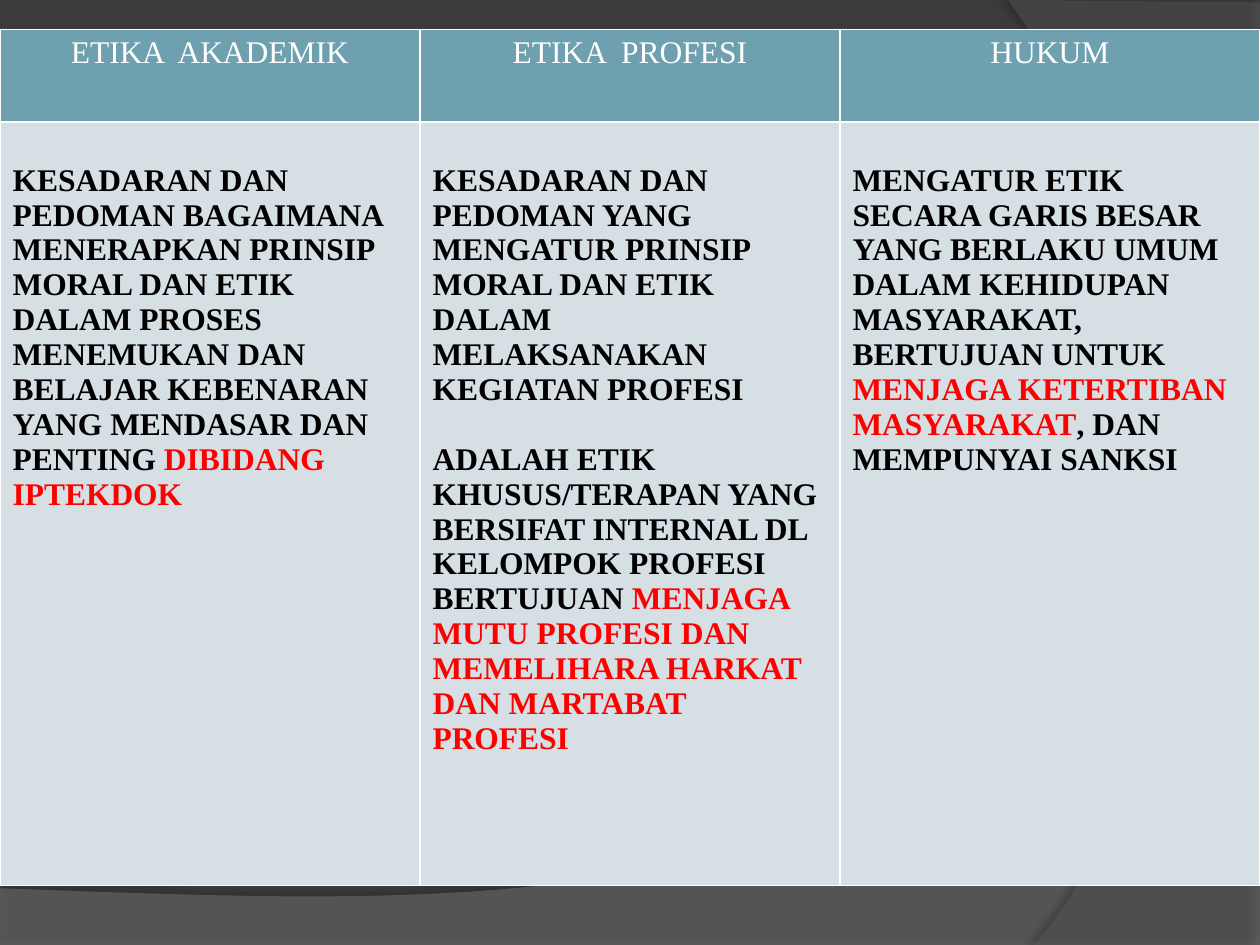
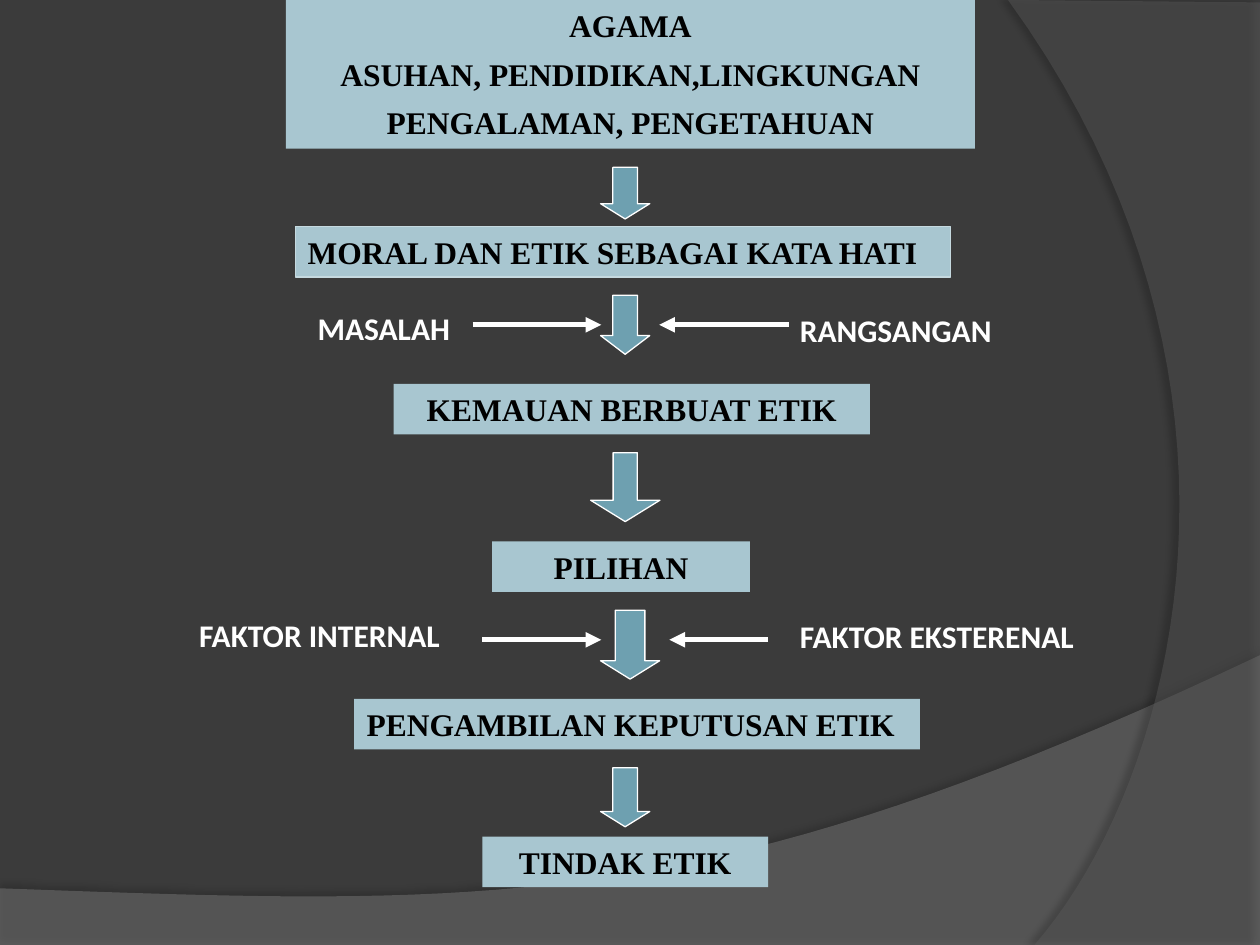
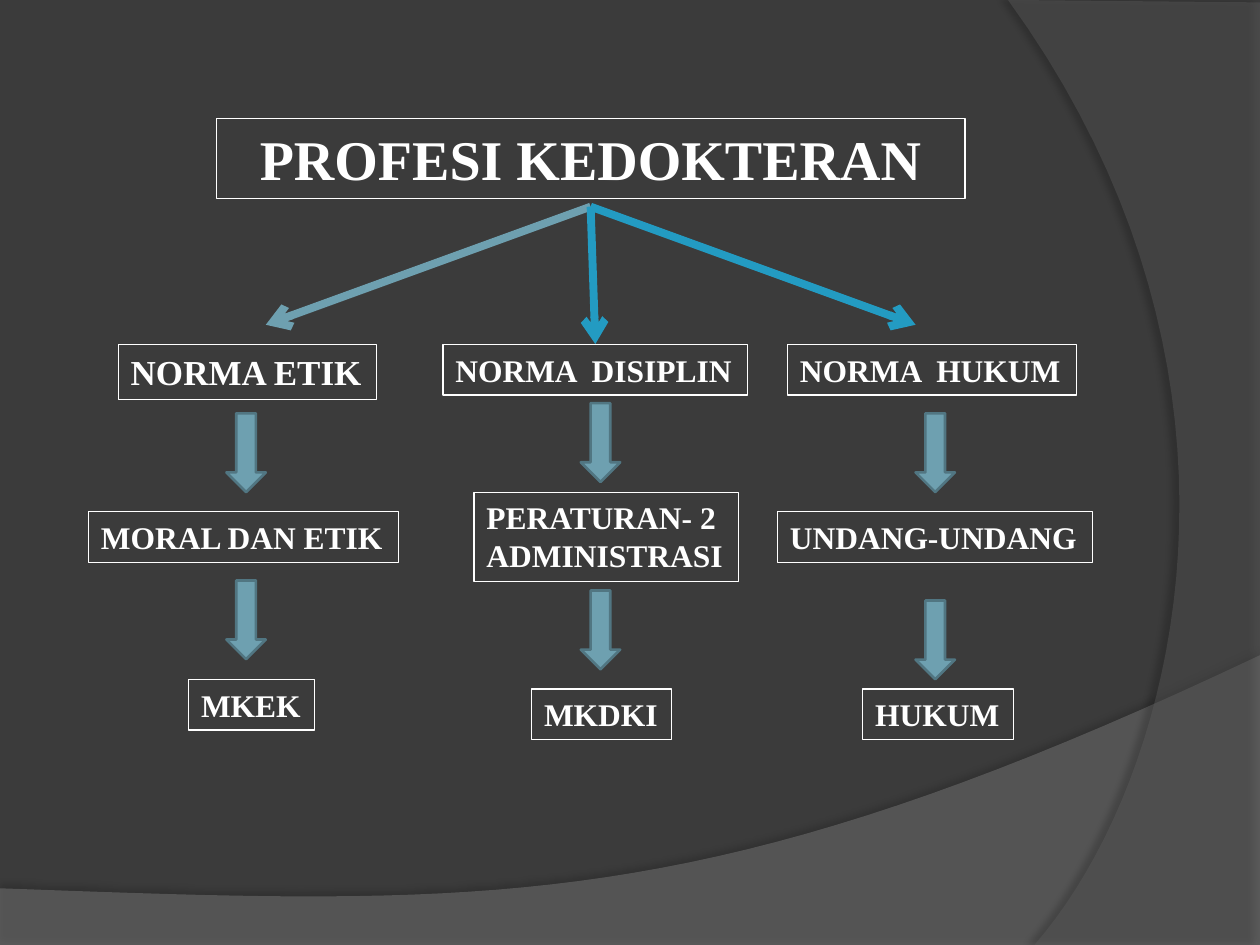
import pptx
import pptx.util
import pptx.dml.color
import pptx.enum.shapes
import pptx.enum.text
import pptx.oxml
import pptx.oxml.ns
import lxml.etree

Pt = pptx.util.Pt
RGBColor = pptx.dml.color.RGBColor
PresetShape = pptx.enum.shapes.MSO_SHAPE
Align = pptx.enum.text.PP_ALIGN
Anchor = pptx.enum.text.MSO_ANCHOR

CHARCOAL = RGBColor(0x3B, 0x3B, 0x3B)
HILL_GREY = RGBColor(0x7F, 0x7F, 0x7F)
ARC_GREY = RGBColor(0x5E, 0x5E, 0x5E)
WHITE = RGBColor(0xFF, 0xFF, 0xFF)
BLACK = RGBColor(0x00, 0x00, 0x00)
RED = RGBColor(0xFF, 0x00, 0x00)
TEAL = RGBColor(0x6E, 0xA0, 0xB0)
DARK_TEAL = RGBColor(0x51, 0x76, 0x82)
PALE_TEAL = RGBColor(0xA8, 0xC6, 0xD0)
PALE_EDGE = RGBColor(0xC5, 0xD9, 0xDF)
MIST = RGBColor(0xD5, 0xDF, 0xE4)
BLUE = RGBColor(0x23, 0x9B, 0xC2)

SERIF = "Times New Roman"
SANS = "Calibri"
BOX_HEIGHT = 28.9
LINE_GAP = 20


def add_xml(parent, tag, **attributes):
    child = lxml.etree.SubElement(parent, pptx.oxml.ns.qn(tag))
    for name, value in attributes.items():
        child.set(name, str(value))
    return child


def curve(start, first, second, end, steps=40):
    points = []
    for step in range(1, steps + 1):
        t = step / steps
        weights = ((1 - t) ** 3, 3 * t * (1 - t) ** 2, 3 * t * t * (1 - t), t ** 3)
        corners = (start, first, second, end)
        points.append(tuple(sum(w * c[axis] for w, c in zip(weights, corners)) for axis in (0, 1)))
    return points


HILL = [(0, 507.6), (0, 540.7), (720, 540.7), (720, 374.4)]
HILL += curve(HILL[-1], (402.5, 524.9), (281.5, 517.7), HILL[0])
ARC = [(720, 1.4), (720, 540), (591.1, 540)]
ARC += curve(ARC[-1], (673.2, 445.7), (733, 216), (576, 0))


class Deck:
    def __init__(self):
        self.presentation = pptx.Presentation()
        self.presentation.slide_width = Pt(720)
        self.presentation.slide_height = Pt(540)
        self.page = None

    def new_page(self):
        self.page = self.presentation.slides.add_slide(self.presentation.slide_layouts[6])
        fill = self.page.background.fill
        fill.solid()
        fill.fore_color.rgb = CHARCOAL
        self.backdrop(HILL, HILL_GREY, 45, 35, 3.5, 270)
        self.backdrop(ARC, ARC_GREY, 40, 45, 4, 180)

    def backdrop(self, points, color, opacity, shade, distance, angle):
        places = [(Pt(x), Pt(y)) for x, y in points]
        builder = self.page.shapes.build_freeform(*places[0], scale=1)
        builder.add_line_segments(places[1:], close=True)
        shape = builder.convert_to_shape()
        self.paint(shape, color, None)
        properties = shape._element.spPr
        tint = properties.find(pptx.oxml.ns.qn("a:solidFill")).find(pptx.oxml.ns.qn("a:srgbClr"))
        add_xml(tint, "a:alpha", val=opacity * 1000)
        effects = properties.find(pptx.oxml.ns.qn("a:effectLst"))
        shadow = add_xml(effects, "a:outerShdw", blurRad=Pt(4), dist=Pt(distance),
                         dir=angle * 60000, algn="ctr", rotWithShape=0)
        shadow_color = add_xml(shadow, "a:srgbClr", val=BLACK)
        add_xml(shadow_color, "a:alpha", val=shade * 1000)

    def paint(self, shape, fill, line, width=0.75):
        shape.shadow.inherit = False
        if fill is None:
            shape.fill.background()
        else:
            shape.fill.solid()
            shape.fill.fore_color.rgb = fill
        if line is None:
            shape.line.fill.background()
        else:
            shape.line.color.rgb = line
            shape.line.width = Pt(width)

    def put_text(self, frame, paragraphs, size=18, font=SERIF, bold=True, align=Align.LEFT, before=0, gap=0):
        for index, spans in enumerate(paragraphs):
            para = frame.add_paragraph() if index else frame.paragraphs[0]
            para.alignment = align
            para.space_before = Pt(gap if index else before)
            for text, color in spans:
                span = para.add_run()
                span.text = text
                span.font.size = Pt(size)
                span.font.name = font
                span.font.bold = bold
                span.font.color.rgb = color

    def fit(self, frame, wrap):
        frame.word_wrap = wrap
        frame.auto_size = pptx.enum.text.MSO_AUTO_SIZE.SHAPE_TO_FIT_TEXT

    def box(self, lines, left, top, width, height=BOX_HEIGHT, fill=None, line=None,
            color=BLACK, wrap=True, **style):
        shape = self.page.shapes.add_shape(PresetShape.RECTANGLE, Pt(left), Pt(top), Pt(width), Pt(height))
        self.paint(shape, fill, line)
        self.fit(shape.text_frame, wrap)
        shape.text_frame.vertical_anchor = Anchor.TOP
        self.put_text(shape.text_frame, [[(text, color)] for text in lines], **style)

    def label(self, text, left, top, width):
        box = self.page.shapes.add_textbox(Pt(left), Pt(top), Pt(width), Pt(BOX_HEIGHT))
        self.fit(box.text_frame, True)
        self.put_text(box.text_frame, [[(text, WHITE)]], font=SANS)

    def down_arrow(self, left, top, width, height, line, weight, shaft=0.5, head=0.5):
        shape = self.page.shapes.add_shape(PresetShape.DOWN_ARROW, Pt(left), Pt(top), Pt(width), Pt(height))
        shape.adjustments[0] = shaft
        shape.adjustments[1] = head
        self.paint(shape, TEAL, line, weight)

    def line_arrow(self, start, end, color, weight, head):
        straight = pptx.enum.shapes.MSO_CONNECTOR.STRAIGHT
        line = self.page.shapes.add_connector(straight, *(Pt(value) for value in start + end))
        line.line.color.rgb = color
        line.line.width = Pt(weight)
        properties = line._element.spPr
        add_xml(properties.find(pptx.oxml.ns.qn("a:ln")), "a:tailEnd", type=head)
        add_xml(properties, "a:effectLst")

    def cell_style(self, cell, fill):
        properties = cell._tc.get_or_add_tcPr()
        for side in ("a:lnL", "a:lnR", "a:lnT", "a:lnB"):
            edge = add_xml(properties, side, w=Pt(1))
            add_xml(add_xml(edge, "a:solidFill"), "a:srgbClr", val=WHITE)
        cell.fill.solid()
        cell.fill.fore_color.rgb = fill

    def table(self, headings, bodies, left, top, width, heights):
        frame = self.page.shapes.add_table(2, len(headings), Pt(left), Pt(top), Pt(width), Pt(sum(heights)))
        grid = frame.table
        for row, height in zip(grid.rows, heights):
            row.height = Pt(height)
        for index, (heading, body) in enumerate(zip(headings, bodies)):
            grid.columns[index].width = Pt(width / len(headings))
            top_cell, body_cell = grid.cell(0, index), grid.cell(1, index)
            self.cell_style(top_cell, TEAL)
            self.put_text(top_cell.text_frame, [[(heading, WHITE)]], bold=False, align=Align.CENTER)
            self.cell_style(body_cell, MIST)
            body_cell.margin_top = Pt(3.6 + LINE_GAP)
            self.put_text(body_cell.text_frame, body, gap=LINE_GAP)


def comparison_page(deck):
    deck.new_page()
    academic = [[("KESADARAN DAN PEDOMAN BAGAIMANA MENERAPKAN PRINSIP MORAL DAN ETIK DALAM PROSES "
                  "MENEMUKAN DAN BELAJAR KEBENARAN YANG MENDASAR DAN PENTING ", BLACK),
                 ("DIBIDANG IPTEKDOK", RED)]]
    professional = [[("KESADARAN DAN PEDOMAN YANG MENGATUR PRINSIP MORAL DAN ETIK DALAM "
                      "MELAKSANAKAN KEGIATAN PROFESI", BLACK)],
                    [("ADALAH ETIK KHUSUS/TERAPAN YANG BERSIFAT INTERNAL DL KELOMPOK PROFESI BERTUJUAN ", BLACK),
                     ("MENJAGA MUTU PROFESI DAN MEMELIHARA HARKAT DAN MARTABAT PROFESI", RED)]]
    law = [[("MENGATUR ETIK SECARA GARIS BESAR YANG BERLAKU UMUM DALAM KEHIDUPAN MASYARAKAT, "
             "BERTUJUAN UNTUK ", BLACK),
            ("MENJAGA KETERTIBAN MASYARAKAT", RED), (", DAN MEMPUNYAI SANKSI", BLACK)]]
    deck.table(["ETIKA  AKADEMIK", "ETIKA  PROFESI", "HUKUM"], [academic, professional, law],
               0, 16.9, 720, (52.7, 436.4))


def decision_page(deck):
    deck.new_page()
    deck.box(["AGAMA", "ASUHAN, PENDIDIKAN,LINGKUNGAN", "PENGALAMAN, PENGETAHUAN"],
             163.4, 0, 393.8, 85, fill=PALE_TEAL, align=Align.CENTER, before=6, gap=6)
    for text, left, top, width, align, edge in (
            ("MORAL DAN ETIK SEBAGAI KATA HATI", 168.7, 129.4, 374.4, Align.LEFT, PALE_EDGE),
            ("KEMAUAN BERBUAT ETIK", 224.9, 219.4, 272.2, Align.CENTER, None),
            ("PILIHAN", 281.2, 309.4, 147.4, Align.CENTER, None),
            ("PENGAMBILAN KEPUTUSAN ETIK", 202.4, 399.4, 323.3, Align.LEFT, None),
            ("TINDAK ETIK", 275.6, 478.1, 163.4, Align.CENTER, None)):
        deck.box([text], left, top, width, fill=PALE_TEAL, line=edge, align=align)
    for text, left, top, width in (
            ("RANGSANGAN", 450, 174.4, 153.4), ("MASALAH", 174.4, 173, 95),
            ("FAKTOR EKSTERENAL", 450, 348.8, 175.7), ("FAKTOR INTERNAL", 106.7, 348.4, 163.4)):
        deck.label(text, left, top, width)
    for start, end, level in ((450.7, 376.7, 185.6), (270, 343.6, 185.6),
                              (439, 382.5, 365.6), (275.6, 343.6, 365.6)):
        deck.line_arrow((start, level), (end, level), WHITE, 3, "triangle")
    for left, top, width, height, shaft, head in (
            (343.2, 95.6, 28.1, 29.5, 0.5, 0.31), (343.2, 168.7, 28.1, 33.8, 0.5, 0.38),
            (337.5, 258.7, 39.6, 39.4, 0.35, 0.31), (343.2, 438.7, 28.1, 33.8, 0.5, 0.31),
            (343.2, 348.7, 33.8, 39.4, 0.5, 0.31)):
        deck.down_arrow(left, top, width, height, WHITE, 0.75, shaft, head)


def norms_page(deck):
    deck.new_page()
    deck.box(["PROFESI KEDOKTERAN"], 123.8, 67.6, 427.7, 46, line=WHITE, color=WHITE,
             size=32, align=Align.CENTER)
    for lines, left, top, width, height, size in (
            (["NORMA ETIK"], 67.6, 196.9, 147.6, 31.5, 20),
            (["NORMA  DISIPLIN"], 253.1, 196.9, 174.2, BOX_HEIGHT, 18),
            (["NORMA  HUKUM"], 450, 196.9, 165, BOX_HEIGHT, 18),
            (["MORAL DAN ETIK"], 50.6, 292.5, 177.1, BOX_HEIGHT, 18),
            (["PERATURAN- 2", "ADMINISTRASI"], 270.9, 281.3, 151.2, 51, 18),
            (["UNDANG-UNDANG"], 444.3, 292.5, 180, BOX_HEIGHT, 18),
            (["MKEK"], 107.8, 388.3, 72, BOX_HEIGHT, 18),
            (["MKDKI"], 303.8, 393.8, 79.9, BOX_HEIGHT, 18),
            (["HUKUM"], 493, 393.8, 86.4, BOX_HEIGHT, 18)):
        deck.box(lines, left, top, width, height, line=WHITE, color=WHITE, wrap=False, size=size)
    for left, tops in ((129.4, (236.2, 331.7)), (331.9, (230.4, 337.5)), (523.2, (236.2, 343.2))):
        for top in tops:
            deck.down_arrow(left, top, 22.5, 45, DARK_TEAL, 1.5)
    for end, color in (((151.9, 185.6), TEAL), ((340.2, 196.6), BLUE), ((523.2, 185.6), BLUE)):
        deck.line_arrow((337.5, 118.1), end, color, 4.5, "arrow")


def main():
    deck = Deck()
    comparison_page(deck)
    decision_page(deck)
    norms_page(deck)
    deck.presentation.save("out.pptx")


if __name__ == "__main__":
    main()
